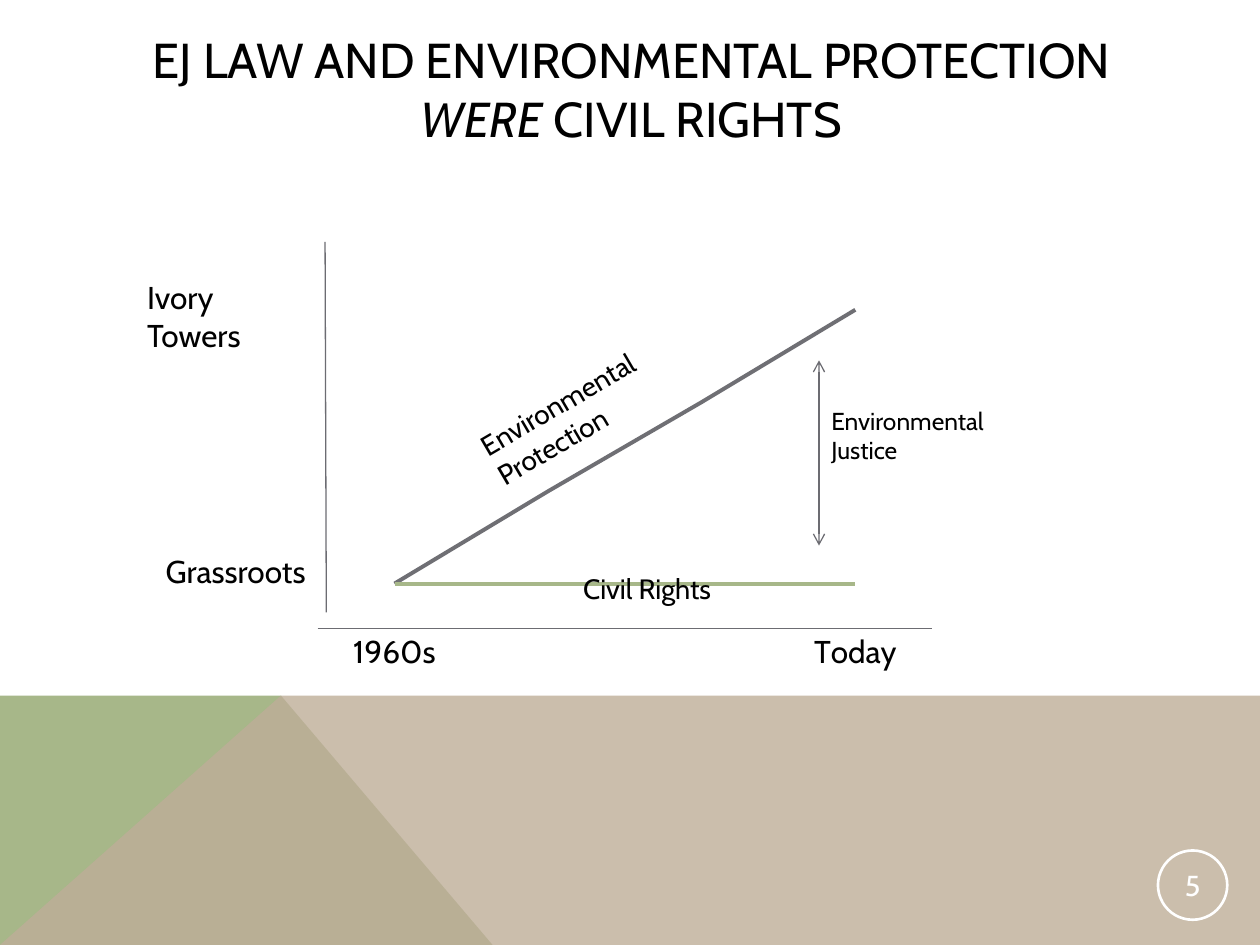
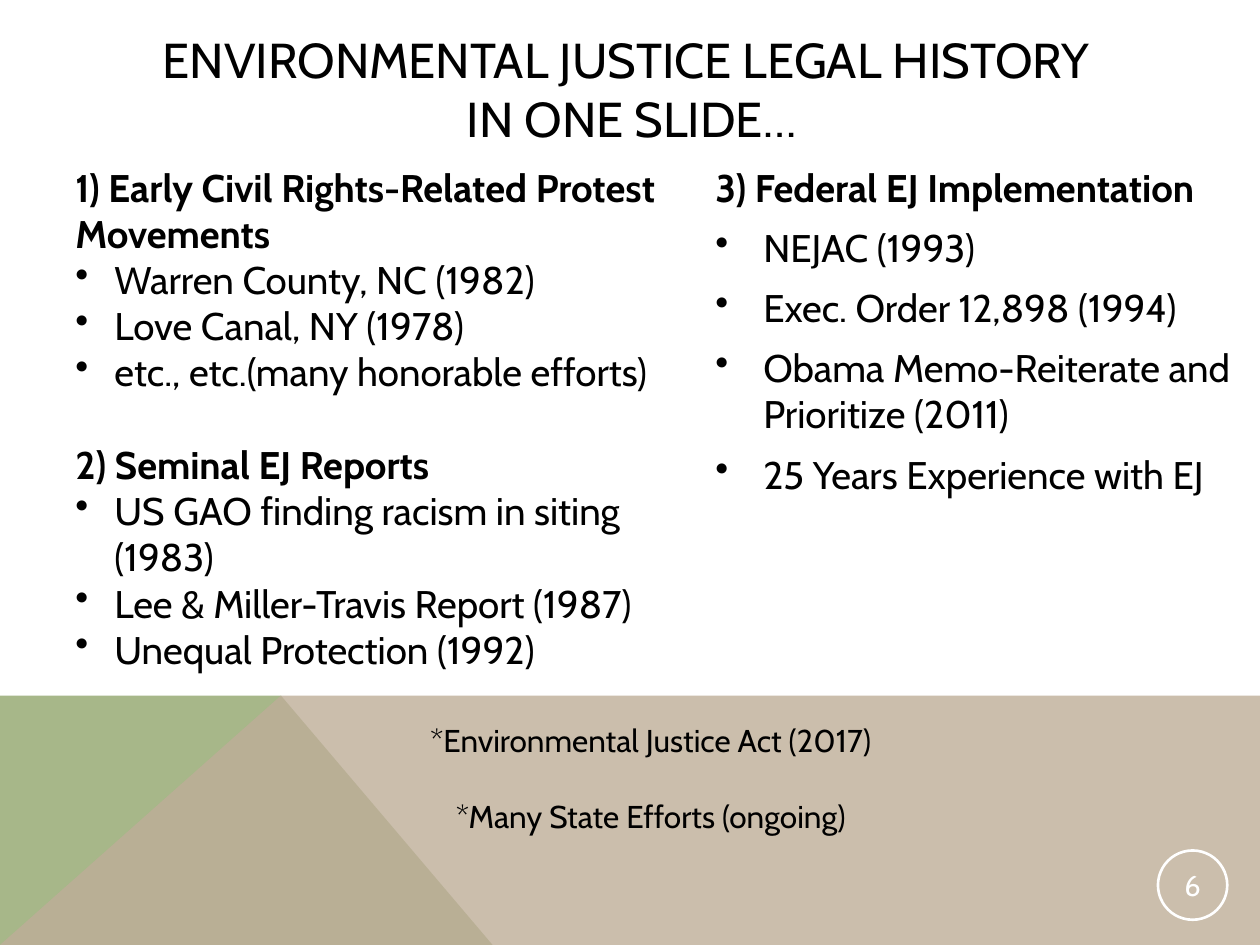
from lxml import etree
from pptx import Presentation
from pptx.chart.data import CategoryChartData
from pptx.dml.color import RGBColor
from pptx.enum.chart import XL_CHART_TYPE, XL_TICK_MARK
from pptx.enum.shapes import MSO_CONNECTOR, MSO_SHAPE
from pptx.enum.text import MSO_ANCHOR, PP_ALIGN
from pptx.oxml.ns import qn
from pptx.util import Inches, Pt

LINE, STRAIGHT = XL_CHART_TYPE.LINE, MSO_CONNECTOR.STRAIGHT
NO_TICK = XL_TICK_MARK.NONE
OVAL, RECT = MSO_SHAPE.OVAL, MSO_SHAPE.RECTANGLE
TOP, MIDDLE = MSO_ANCHOR.TOP, MSO_ANCHOR.MIDDLE
LEFT, CENTER = PP_ALIGN.LEFT, PP_ALIGN.CENTER

HEX = {"ink": "000000", "white": "FFFFFF", "green": "A7B789",
       "sand": "BEAE98", "gray": "6F6F74", "rule": "6C6C72"}
FONT = "Cabin"

# Grid of 100 columns by 75 rows; boxes are (column, row, columns, rows)
COLS, ROWS = 100, 75
CELL = Inches(0.1)
TITLE = (9, 4, 82.2, 6)
BAND = (0, 55.2, COLS, 19.8)
BADGE = (91.9, 67.5, 5.5, 5.5)
PLOT = (24.2, 12.9, 50.8, 41.2)
EARLY = (5, 12.5, 48.3, 44.8)
RECENT = (55.8, 12.5, 43.3, 40.8)
NOTE = (30.8, 56.7, 41.7, 13.1)


def color(name):
    return RGBColor.from_string(HEX[name])


def grid(*cells):
    return [round(n * CELL) for n in cells]


def inside(box, dx, dy, *size):
    return (box[0] + dx, box[1] + dy, *size)


def style(font, size, tint="ink", bold=False):
    font.name, font.size, font.bold = FONT, Pt(size), bold
    font.color.rgb = color(tint)


def outline(shape, tint, width):
    shape.line.color.rgb = color(tint)
    shape.line.width = Pt(width)


def frame(shape, anchor=TOP):
    text = shape.text_frame
    text.word_wrap = True
    text.vertical_anchor = anchor
    return text


def label(slide, box, words, size, align=LEFT, anchor=TOP, turn=0):
    """Add a text box; words is a list of (text, italic) runs or a string."""
    shape = slide.shapes.add_textbox(*grid(*box))
    shape.rotation = turn
    para = frame(shape, anchor).paragraphs[0]
    para.alignment = align
    style(para.font, size)
    if isinstance(words, str):
        para.text = words
    else:
        for text, slant in words:
            run = para.add_run()
            run.text, run.font.italic = text, slant


def rule(slide, box, start, end, arrows=False):
    ends = grid(*inside(box, *start), *inside(box, *end))
    line = slide.shapes.add_connector(STRAIGHT, *ends)
    outline(line, "rule", 0.75)
    props = line.line._get_or_add_ln()
    if arrows:
        for tag in ("a:headEnd", "a:tailEnd"):
            etree.SubElement(props, qn(tag), type="arrow")
    etree.SubElement(props.getparent(), qn("a:effectLst"))


def outlined(slide, kind, box, tint, width):
    shape = slide.shapes.add_shape(kind, *grid(*box))
    shape.shadow.inherit = False
    shape.fill.background()
    outline(shape, tint, width)
    return shape


# Shared parts: band, title and page badge
def wedge(slide, points, tint, alpha=None):
    first, *rest = [grid(*p) for p in points]
    form = slide.shapes.build_freeform(*first)
    form.add_line_segments(rest)
    shape = form.convert_to_shape()
    shape.shadow.inherit = False
    shape.line.fill.background()
    shape.fill.solid()
    shape.fill.fore_color.rgb = color(tint)
    if alpha:
        tone = shape.fill._xPr.find(".//" + qn("a:srgbClr"))
        etree.SubElement(tone, qn("a:alpha"), val=str(alpha * 1000))


def band(slide, box):
    x, y, w, h = box
    peak, base = (x + 22.3, y), (x, y + h)
    wedge(slide, [base, (x, y), peak, (x + 39.1, y + h)], "green")
    wedge(slide, [base, peak, (x + w, y), (x + w, y + h)], "sand", 80)


def badge(slide, box, number):
    ring = outlined(slide, OVAL, box, "white", 1.5)
    text = frame(ring, MIDDLE)
    text.margin_left = text.margin_right = Inches(0.01)
    text.margin_top = text.margin_bottom = Inches(0.01)
    para = text.paragraphs[0]
    para.text, para.alignment = str(number), CENTER
    style(para.font, 16.5, "white")


def base(deck, title, number):
    slide = deck.slides.add_slide(deck.slide_layouts[6])
    band(slide, BAND)
    label(slide, TITLE, title, 28, CENTER, MIDDLE)
    badge(slide, BADGE, number)
    return slide


# Line chart with its labels
def chart(slide, box):
    data = CategoryChartData()
    data.categories = ["1960s", "", "", "Today"]
    data.add_series("Series 1", (14, 43, 71, 100))
    data.add_series("Series 2", (14, 14, 14, 14))
    graph = slide.shapes.add_chart(LINE, *grid(*box), data).chart
    graph.has_legend = graph.has_title = False
    style(graph.font, 18)
    values, times = graph.value_axis, graph.category_axis
    values.visible = values.has_major_gridlines = False
    values.minimum_scale, values.maximum_scale = 0, 143
    values.major_unit = 143
    times.major_tick_mark = times.minor_tick_mark = NO_TICK
    outline(times.format, "rule", 0.75)
    for series, tint in zip(graph.plots[0].series, ("gray", "green")):
        series.smooth = False
        outline(series.format, tint, 2.25)


def trend(slide, box):
    chart(slide, box)
    rule(slide, box, (1.7, 35.7), (1.6, 6.3))
    rule(slide, box, (40.8, 15.7), (40.8, 30.4), arrows=True)
    for spot, words, size, align, turn in (
            ((-13.5, 8.7, 15, 4), "Ivory Towers", 18, LEFT, 0),
            ((-12.6, 30.4, 14.2, 4), "Grassroots", 18, CENTER, 0),
            ((12.8, 16.9, 16.7, 6.4), "Environmental Protection", 16, LEFT, 329.7),
            ((21.1, 32, 14.4, 3.7), "Civil Rights", 16, LEFT, 0),
            ((40.8, 18.8, 15, 5.7), "Environmental Justice", 14, LEFT, 0)):
        label(slide, inside(box, *spot), words, size, align, turn=turn)


# Headed bullet lists and the closing note
def write(text, words, size, gap=0, bold=False, align=LEFT):
    para = text.paragraphs[0]
    if para.text:
        para = text.add_paragraph()
    para.text, para.alignment = words, align
    para.space_before = Pt(gap)
    style(para.font, size, bold=bold)
    return para


def hang(para, depth, dot=True):
    props = para._p.get_or_add_pPr()
    props.set("marL", str(Inches(depth)))
    props.set("indent", str(-Inches(depth)))
    if dot:
        mark = etree.Element(qn("a:buChar"), char="•")
        fonts = props.find(qn("a:defRPr"))
        fonts.addprevious(mark)


def listing(text, head, items, depth, gap=0, lead=0, flush=True):
    para = write(text, head, 22, lead, bold=True)
    if not flush:
        hang(para, depth, dot=False)
    for item in items:
        hang(write(text, item, 22, gap), depth)


def early(slide, box):
    text = frame(slide.shapes.add_textbox(*grid(*box)))
    listing(text, "1) Early Civil Rights-Related Protest Movements",
            ["Warren County, NC (1982)", "Love Canal, NY (1978)",
             "etc., etc.(many honorable efforts)"], 0.31)
    listing(text, "2) Seminal EJ Reports",
            ["US GAO finding racism in siting (1983)",
             "Lee & Miller-Travis Report (1987)",
             "Unequal Protection (1992)"], 0.31, lead=26.5)


def recent(slide, box):
    text = frame(outlined(slide, RECT, box, "white", 0.75))
    listing(text, "3) Federal EJ Implementation",
            ["NEJAC (1993)", "Exec. Order 12,898 (1994)",
             "Obama Memo-Reiterate and Prioritize (2011)",
             "25 Years Experience with EJ"],
            0.38, gap=8, lead=8, flush=False)


def note(slide, box):
    text = frame(slide.shapes.add_textbox(*grid(*box)))
    write(text, "*Environmental Justice Act (2017)", 18, align=CENTER)
    write(text, "*Many State Efforts (ongoing)", 18, 22, align=CENTER)


def main():
    deck = Presentation()
    deck.slide_width, deck.slide_height = grid(COLS, ROWS)

    slide = base(deck, [("EJ LAW AND ENVIRONMENTAL PROTECTION ", False),
                        ("WERE", True), (" CIVIL RIGHTS", False)], 5)
    trend(slide, PLOT)

    slide = base(deck, "ENVIRONMENTAL JUSTICE LEGAL HISTORY \vIN ONE SLIDE…", 6)
    recent(slide, RECENT)
    early(slide, EARLY)
    note(slide, NOTE)

    deck.save("out.pptx")


if __name__ == "__main__":
    main()
